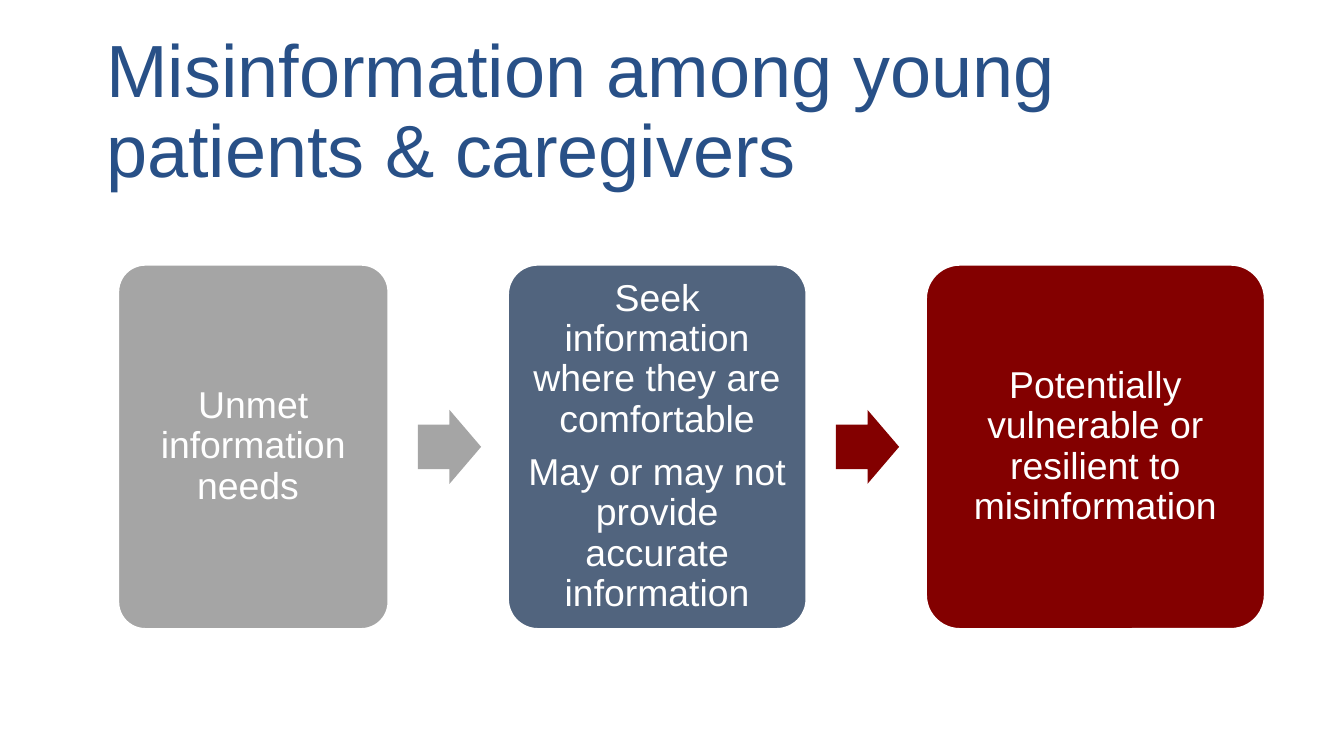
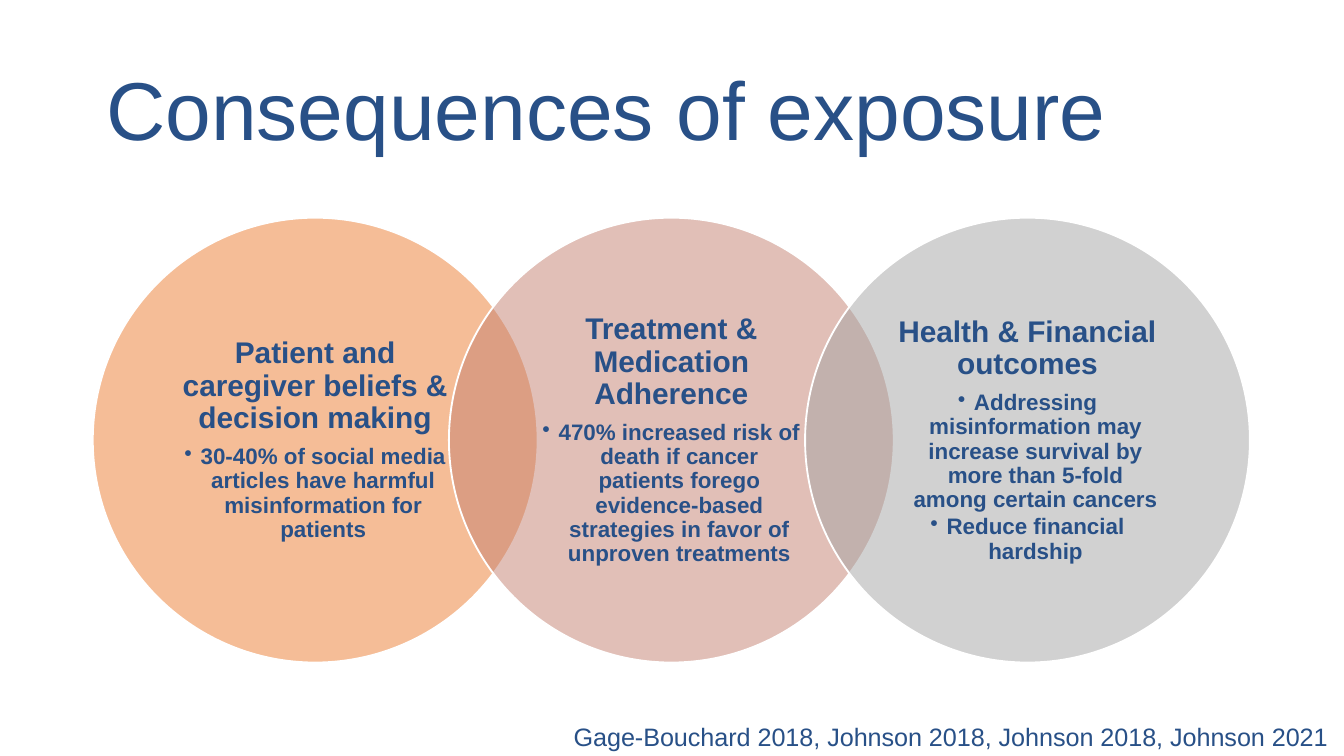
from dataclasses import dataclass

from lxml import etree
from pptx import Presentation
from pptx.dml.color import RGBColor
from pptx.enum.shapes import MSO_SHAPE
from pptx.enum.text import MSO_ANCHOR, MSO_AUTO_SIZE, PP_ALIGN
from pptx.oxml.ns import qn
from pptx.util import Inches, Pt

CARD, ARROW, CIRCLE = MSO_SHAPE.ROUNDED_RECTANGLE, MSO_SHAPE.RIGHT_ARROW, MSO_SHAPE.OVAL
MIDDLE, TOP = MSO_ANCHOR.MIDDLE, MSO_ANCHOR.TOP
LEFT, CENTER = PP_ALIGN.LEFT, PP_ALIGN.CENTER
FIXED = MSO_AUTO_SIZE.NONE


@dataclass(frozen=True)
class Theme:
    font: str = "Arial"
    navy: str = "285087"
    white: str = "FFFFFF"
    gray: str = "A5A5A5"
    slate: str = "51647E"
    maroon: str = "830000"
    orange: str = "ED7D31"
    rose: str = "C48170"
    title_size: float = 44
    long_title_size: float = 39.6
    card_size: float = 20
    heading_size: float = 16
    bullet_size: float = 12
    citation_size: float = 13.5
    line_spacing: float = 0.9


T = Theme()

PATHWAY_TITLE = "Misinformation among young patients & caregivers"
STEPS = [
    (2.01, T.gray, ["Unmet information needs "]),
    (2.22, T.slate, ["Seek information where they are comfortable",
                     "May or may not provide accurate information"]),
    (2.52, T.maroon, ["Potentially vulnerable or resilient to misinformation"]),
]
ARROW_COLORS = [T.gray, T.maroon]

OUTCOMES_TITLE = "Consequences of exposure"
OUTCOMES = [
    (T.orange, "Patient and caregiver beliefs & decision making",
     ["30-40% of social media articles have harmful misinformation for patients"]),
    (T.rose, "Treatment & Medication Adherence",
     ["470% increased risk of death if cancer patients forego evidence-based "
      "strategies in favor of unproven treatments"]),
    (T.gray, "Health & Financial outcomes",
     ["Addressing misinformation may increase survival by more than 5-fold "
      "among certain cancers",
      "Reduce financial hardship"]),
]
CITATION = "Gage-Bouchard 2018, Johnson 2018, Johnson 2018, Johnson 2021"


def apply(target, **values):
    for name, value in values.items():
        setattr(target, name, value)


def setup_frame(tf, anchor, x_inset, y_inset):
    apply(tf, word_wrap=True, auto_size=FIXED, vertical_anchor=anchor,
          margin_left=Inches(x_inset), margin_right=Inches(x_inset),
          margin_top=Inches(y_inset), margin_bottom=Inches(y_inset))


def add_bullet(p):
    pPr = p._p.get_or_add_pPr()
    pPr.set("marL", str(Inches(0.12)))
    pPr.set("indent", str(-Inches(0.12)))
    etree.SubElement(pPr, qn("a:buChar")).set("char", "•")


def write(tf, paragraphs, align, color, spacing=T.line_spacing):
    for i, (text, size, after, bold, bullet) in enumerate(paragraphs):
        p = tf.paragraphs[0] if i == 0 else tf.add_paragraph()
        apply(p, alignment=align, line_spacing=spacing,
              space_before=Pt(0), space_after=Pt(after))
        if bullet:
            add_bullet(p)
        r = p.add_run()
        r.text = text
        apply(r.font, name=T.font, size=Pt(size), bold=bold)
        r.font.color.rgb = RGBColor.from_string(color)


def add_shape(s, kind, box, color, adjustments=(), outlined=True, alpha=None):
    sp = s.shapes.add_shape(kind, *map(Inches, box))
    sp.shadow.inherit = False
    for i, value in enumerate(adjustments):
        sp.adjustments[i] = value
    sp.fill.solid()
    sp.fill.fore_color.rgb = RGBColor.from_string(color)
    if alpha is not None:
        rgb = sp.fill._xPr.find(qn("a:solidFill"))[0]
        etree.SubElement(rgb, qn("a:alpha")).set("val", str(alpha * 1000))
    if outlined:
        sp.line.color.rgb = RGBColor.from_string(T.white)
        sp.line.width = Pt(1)
    else:
        sp.line.fill.background()
    return sp


def add_slide(prs, title, size):
    s = prs.slides.add_slide(prs.slide_layouts[5])
    sp = s.shapes.title
    apply(sp, left=Inches(0.69), top=Inches(0.3), width=Inches(8.62), height=Inches(1.09))
    setup_frame(sp.text_frame, MIDDLE, 0.1, 0.05)
    write(sp.text_frame, [(title, size, 0, False, False)], LEFT, T.navy)
    return s


def build_pathway(prs):
    s = add_slide(prs, PATHWAY_TITLE, T.long_title_size)
    x, top, height, gap = 0.88, 1.97, 2.71, 0.89
    arrow_w, arrow_h, arrow_offset = 0.47, 0.55, 0.22
    arrow_top = top + (height - arrow_h) / 2
    for i, (width, color, texts) in enumerate(STEPS):
        if i:
            box = (x - gap + arrow_offset, arrow_top, arrow_w, arrow_h)
            add_shape(s, ARROW, box, ARROW_COLORS[i - 1], (0.6, 0.5), outlined=False)
        sp = add_shape(s, CARD, (x, top, width, height), color, (0.1,))
        setup_frame(sp.text_frame, MIDDLE, 0.08, 0.08)
        write(sp.text_frame,
              [(text, T.card_size, T.card_size * 0.35, False, False) for text in texts],
              CENTER, T.white)
        x += width + gap


def build_outcomes(prs):
    s = add_slide(prs, OUTCOMES_TITLE, T.title_size)
    sp = s.shapes.add_textbox(*map(Inches, (4.17, 5.32, 6.24, 0.33)))
    setup_frame(sp.text_frame, TOP, 0.1, 0.05)
    write(sp.text_frame, [(CITATION, T.citation_size, 0, False, False)], LEFT, T.navy, 1.0)
    left, top, diameter, step = 0.69, 1.62, 3.31, 2.65
    for i, (color, heading, bullets) in enumerate(OUTCOMES):
        box = (left + i * step, top, diameter, diameter)
        sp = add_shape(s, CIRCLE, box, color, alpha=50)
        setup_frame(sp.text_frame, MIDDLE, 0.18, 0.02)
        paragraphs = [(heading, T.heading_size, T.heading_size * 0.35, True, False)]
        paragraphs += [(text, T.bullet_size, T.bullet_size * 0.15, True, True)
                       for text in bullets]
        write(sp.text_frame, paragraphs, CENTER, T.navy)


def main():
    prs = Presentation()
    width = Inches(10)
    apply(prs, slide_width=width, slide_height=width * 9 // 16)
    build_pathway(prs)
    build_outcomes(prs)
    prs.save("out.pptx")


if __name__ == "__main__":
    main()
